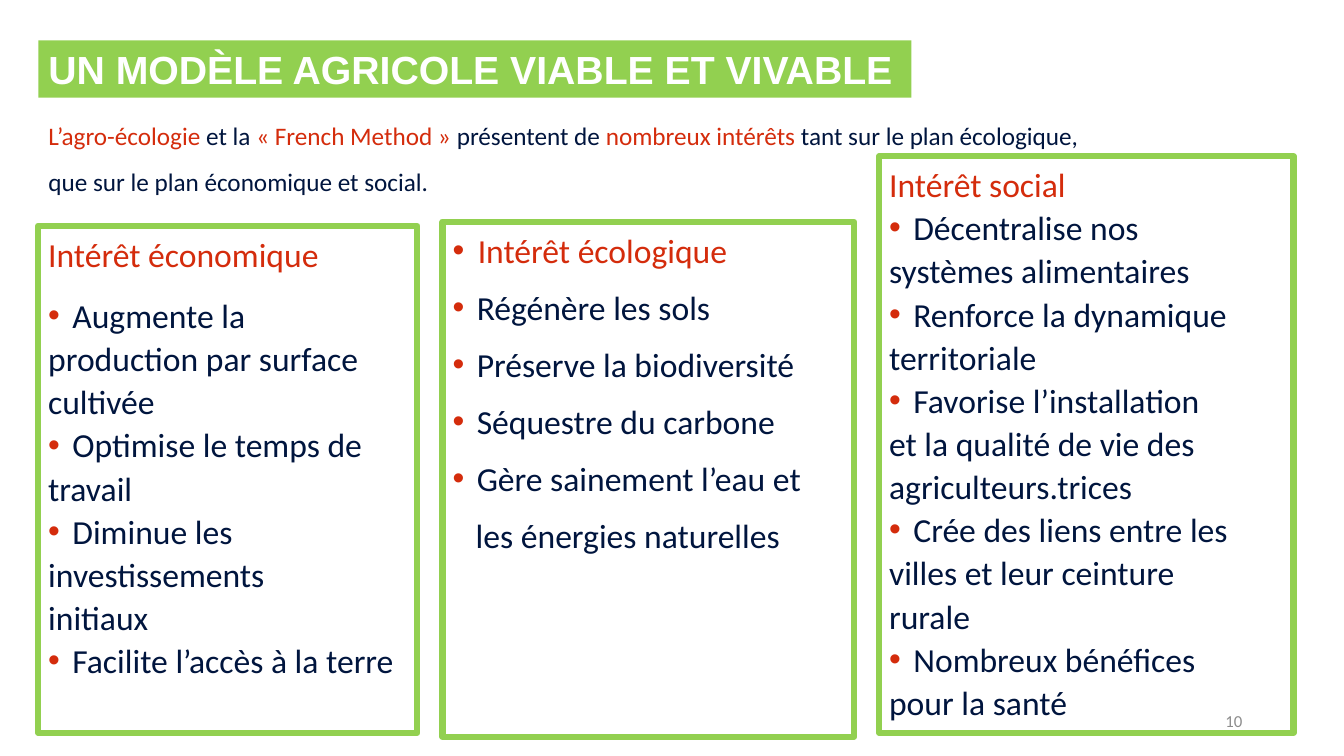
"""Build the slide on the economic, ecological and social interest of agroecology."""
from lxml.etree import SubElement
from pptx import Presentation
from pptx.dml.color import RGBColor
from pptx.enum.shapes import MSO_SHAPE as Shape
from pptx.enum.text import MSO_ANCHOR as Anchor, MSO_AUTO_SIZE as AutoSize, PP_ALIGN as Align
from pptx.oxml.ns import qn
from pptx.util import Inches, Pt

GREEN, RED, NAVY, GREY, WHITE = "92D050", "D42C0C", "00153E", "8C8C8C", "FFFFFF"


def rgb(value):
    return RGBColor.from_string(value)


def write(frame, runs, size=24, font="Calibri", bold=False, align=Align.LEFT,
          bullet=False, indent=0, before=0, spacing=1.07):
    first = not frame.paragraphs[0].runs
    paragraph = frame.paragraphs[0] if first else frame.add_paragraph()
    props = paragraph._p.get_or_add_pPr()
    props.set("marL", str(Inches(indent)))
    props.set("indent", str(Inches(-indent if bullet else 0)))
    if bullet:
        SubElement(SubElement(props, qn("a:buClr")), qn("a:srgbClr"), val=RED)
        SubElement(props, qn("a:buFont"), typeface="Arial")
        SubElement(props, qn("a:buChar"), char="•")
    else:
        SubElement(props, qn("a:buNone"))
    paragraph.alignment = align
    paragraph.line_spacing = spacing
    paragraph.space_before = Pt(0 if first else before)
    for text, color in runs:
        run = paragraph.add_run()
        run.text = text
        run.font.size, run.font.name, run.font.bold = Pt(size), font, bold
        run.font.color.rgb = rgb(color)


prs = Presentation()
prs.slide_width, prs.slide_height = Inches(13.33), Inches(7.5)
slide = prs.slides.add_slide(prs.slide_layouts[1])

heading = slide.shapes.title
heading.left, heading.top, heading.width, heading.height = map(Inches, (0.38, 0.4, 8.66, 0.57))
heading.fill.solid()
heading.fill.fore_color.rgb = rgb(GREEN)
heading.text_frame.auto_size = AutoSize.NONE
heading.text_frame.word_wrap = False
write(heading.text_frame, [("UN MODÈLE AGRICOLE VIABLE ET VIVABLE", WHITE)],
      size=28, font="Arial", bold=True, spacing=1)

intro = slide.placeholders[1]
intro.left, intro.top, intro.width, intro.height = map(Inches, (0.38, 1.12, 12.57, 5.63))
intro.text_frame.auto_size = AutoSize.NONE
write(intro.text_frame, [
    ("L’agro-écologie ", RED), ("et la ", NAVY), ("« French Method » ", RED),
    ("présentent de ", NAVY), ("nombreux intérêts ", RED),
    ("tant sur le plan écologique,", NAVY)], size=18)
write(intro.text_frame, [("que sur le plan économique et social.", NAVY)], size=18, before=10)

page_number = slide.shapes.add_textbox(*map(Inches, (9.42, 6.95, 3, 0.4))).text_frame
page_number.word_wrap = True
page_number.vertical_anchor = Anchor.MIDDLE
write(page_number, [("10", GREY)], size=12, align=Align.RIGHT, spacing=1)

interests = [
    ("Intérêt économique", (0.38, 2.24, 3.76, 5.03),
     dict(heading_bullet=False, heading_gap=13, gap=0, hang=0), [
         ["Augmente la", "production par surface", "cultivée"],
         ["Optimise le temps de", "travail"],
         ["Diminue les", "investissements", "initiaux"],
         ["Facilite l’accès à la terre"]]),
    ("Intérêt écologique", (4.39, 2.2, 4.08, 5.11),
     dict(heading_bullet=True, heading_gap=10, gap=10, hang=0.23), [
         ["Régénère les sols"],
         ["Préserve la biodiversité"],
         ["Séquestre du carbone"],
         ["Gère sainement l’eau et", "les énergies naturelles"]]),
    ("Intérêt social", (8.72, 1.55, 4.11, 5.72),
     dict(heading_bullet=False, heading_gap=0, gap=0, hang=0), [
         ["Décentralise nos", "systèmes alimentaires"],
         ["Renforce la dynamique", "territoriale"],
         ["Favorise l’installation", "et la qualité de vie des", "agriculteurs.trices"],
         ["Crée des liens entre les", "villes et leur ceinture", "rurale"],
         ["Nombreux bénéfices", "pour la santé"]]),
]

for interest, place, layout, benefits in interests:
    panel = slide.shapes.add_shape(Shape.RECTANGLE, *map(Inches, place))
    panel.shadow.inherit = False
    panel.fill.background()
    panel.line.color.rgb = rgb(GREEN)
    panel.line.width = Pt(4.5)
    content = panel.text_frame
    content.word_wrap = True
    content.vertical_anchor = Anchor.TOP
    write(content, [(interest, RED)], bullet=layout["heading_bullet"],
          indent=0.25 if layout["heading_bullet"] else 0)
    for position, (opening, *continuation) in enumerate(benefits):
        write(content, [(opening, NAVY)], bullet=True, indent=0.24,
              before=layout["gap"] if position else layout["heading_gap"])
        for line in continuation:
            write(content, [(line, NAVY)], indent=layout["hang"], before=layout["gap"])

prs.save("out.pptx")
